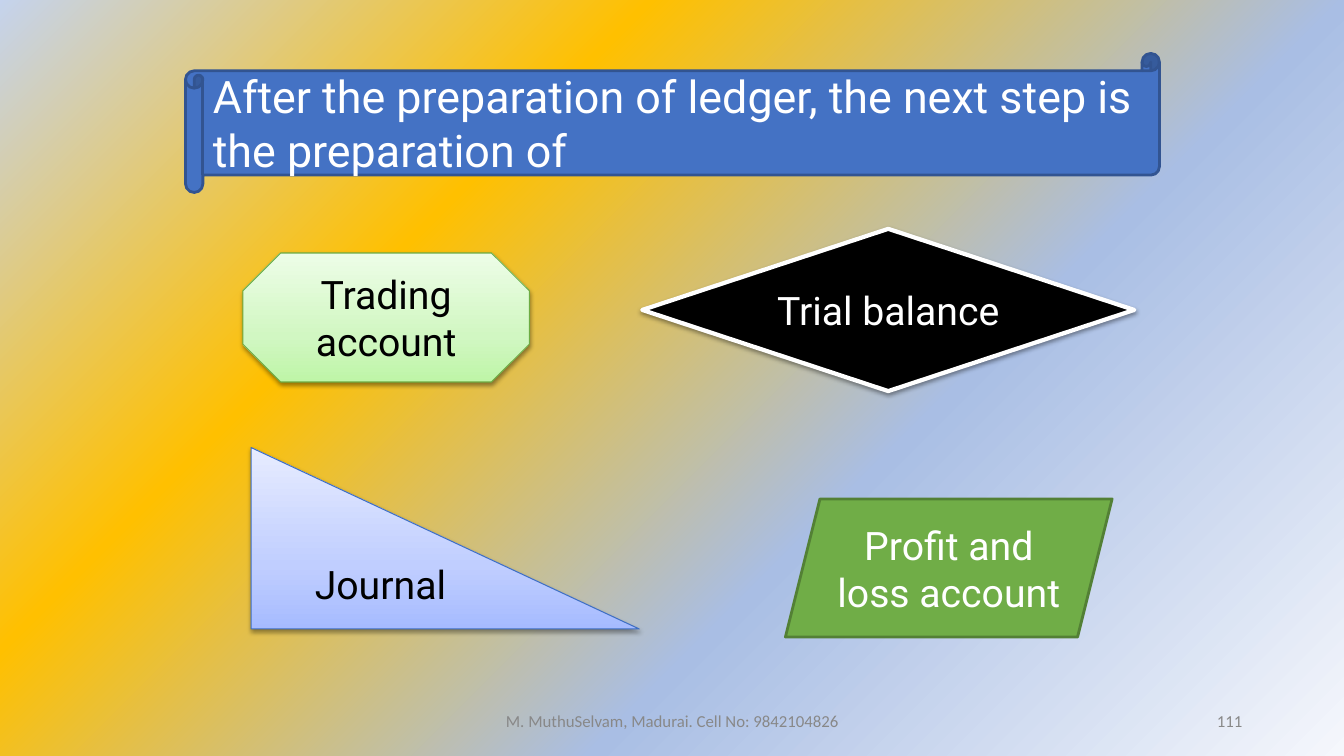
from pptx import Presentation
from pptx.dml.color import RGBColor
from pptx.enum.shapes import MSO_SHAPE
from pptx.enum.text import MSO_ANCHOR, PP_ALIGN
from pptx.oxml import parse_xml
from pptx.oxml.ns import nsdecls, qn
from pptx.util import Inches, Pt

BLACK = RGBColor(0x00, 0x00, 0x00)
WHITE = RGBColor(0xFF, 0xFF, 0xFF)
GREY = RGBColor(0x88, 0x88, 0x88)
BLUE = RGBColor(0x44, 0x72, 0xC4)
DARK_BLUE = RGBColor(0x32, 0x54, 0x91)
MID_BLUE = RGBColor(0x3F, 0x6F, 0xC3)
GREEN = RGBColor(0x70, 0xAD, 0x47)
DARK_GREEN = RGBColor(0x53, 0x80, 0x35)
MID_GREEN = RGBColor(0x6D, 0xAC, 0x43)

BACKGROUND = [(0, RGBColor(0xC5, 0xD3, 0xED)), (31, RGBColor(0xFF, 0xC0, 0x00)),
              (64, RGBColor(0xA9, 0xBE, 0xE4)), (100, RGBColor(0xF5, 0xF7, 0xFC))]
PALE_GREENS = [(0, RGBColor(0xBE, 0xF5, 0xA7)), (35, RGBColor(0xD1, 0xF7, 0xC2)),
               (100, RGBColor(0xED, 0xFD, 0xE7))]
PALE_BLUES = [(0, RGBColor(0xA6, 0xBB, 0xFF)), (35, RGBColor(0xC0, 0xCE, 0xFF)),
              (100, RGBColor(0xE7, 0xEC, 0xFF))]


def set_gradient(owner, fill, stops, angle):
    fill.gradient()
    fill.gradient_angle = angle
    gs_lst = owner.element.find('.//' + qn('a:gsLst'))
    for gs in list(gs_lst):
        gs_lst.remove(gs)
    for pos, color in stops:
        gs_lst.append(parse_xml(
            f'<a:gs {nsdecls("a")} pos="{pos * 1000}"><a:srgbClr val="{color}"/></a:gs>'))


def add_shadow(sp):
    sp.element.spPr.find(qn('a:effectLst')).append(parse_xml(
        f'<a:outerShdw {nsdecls("a")} blurRad="40000" dist="20000" dir="5400000" '
        'rotWithShape="0"><a:srgbClr val="000000"><a:alpha val="38000"/></a:srgbClr>'
        '</a:outerShdw>'))


def write_text(sp, text, size, font, color, align):
    tf = sp.text_frame
    tf.word_wrap = True
    tf.vertical_anchor = MSO_ANCHOR.MIDDLE
    p = tf.paragraphs[0]
    p.text = text
    p.alignment = align
    r = p.runs[0]
    r.font.size = Pt(size)
    r.font.name = font
    r.font.color.rgb = color


def add_panel(s, box, kind, text, fill, line, width, color,
              size=28, align=PP_ALIGN.CENTER, shadow=False):
    sp = s.shapes.add_shape(kind, *map(Inches, box))
    if isinstance(fill, list):
        set_gradient(sp, sp.fill, fill, 90)
    else:
        sp.fill.solid()
        sp.fill.fore_color.rgb = fill
    sp.line.color.rgb = line
    sp.line.width = Pt(width)
    sp.shadow.inherit = False
    if shadow:
        add_shadow(sp)
    write_text(sp, text, size, 'Roboto', color, align)


def add_question(s, box):
    add_panel(s, box, MSO_SHAPE.HORIZONTAL_SCROLL,
              'After the preparation of ledger, the next step is the preparation of',
              BLUE, DARK_BLUE, 2, WHITE, size=32, align=PP_ALIGN.LEFT)


def add_answers(s, box):
    x, y, w, h = box
    add_panel(s, (x, y + 0.24, 2.84, 1.28), MSO_SHAPE.OCTAGON, 'Trading account',
              PALE_GREENS, MID_GREEN, 0.75, BLACK, shadow=True)
    add_panel(s, (x + w - 4.88, y, 4.88, 1.61), MSO_SHAPE.DIAMOND, 'Trial balance',
              BLACK, WHITE, 3, WHITE, shadow=True)
    add_panel(s, (x + 0.08, y + 2.17, 3.85, 1.8), MSO_SHAPE.RIGHT_TRIANGLE, 'Journal',
              PALE_BLUES, MID_BLUE, 0.75, BLACK, shadow=True)
    add_panel(s, (x + w - 3.46, y + h - 1.37, 3.24, 1.37), MSO_SHAPE.PARALLELOGRAM,
              'Profit and loss account', GREEN, DARK_GREEN, 2, WHITE)


def add_footer(s, box):
    x, y, w, h = box
    number_w = 3
    footer_w = w - number_w - 0.5
    for left, width, text, align in (
            (x, footer_w, 'M. MuthuSelvam, Madurai. Cell No: 9842104826', PP_ALIGN.CENTER),
            (x + w - number_w, number_w, '111', PP_ALIGN.RIGHT)):
        sp = s.shapes.add_textbox(*map(Inches, (left, y, width, h)))
        write_text(sp, text, 12, 'Calibri', GREY, align)


def main():
    prs = Presentation()
    prs.slide_width = Inches(13.33)
    prs.slide_height = Inches(7.5)
    s = prs.slides.add_slide(prs.slide_layouts[6])
    set_gradient(s, s.background.fill, BACKGROUND, 315)
    add_question(s, (1.84, 0.53, 9.66, 1.38))
    add_answers(s, (2.41, 2.27, 8.84, 4.05))
    add_footer(s, (4.42, 6.95, 8, 0.4))
    prs.save("out.pptx")


if __name__ == "__main__":
    main()
